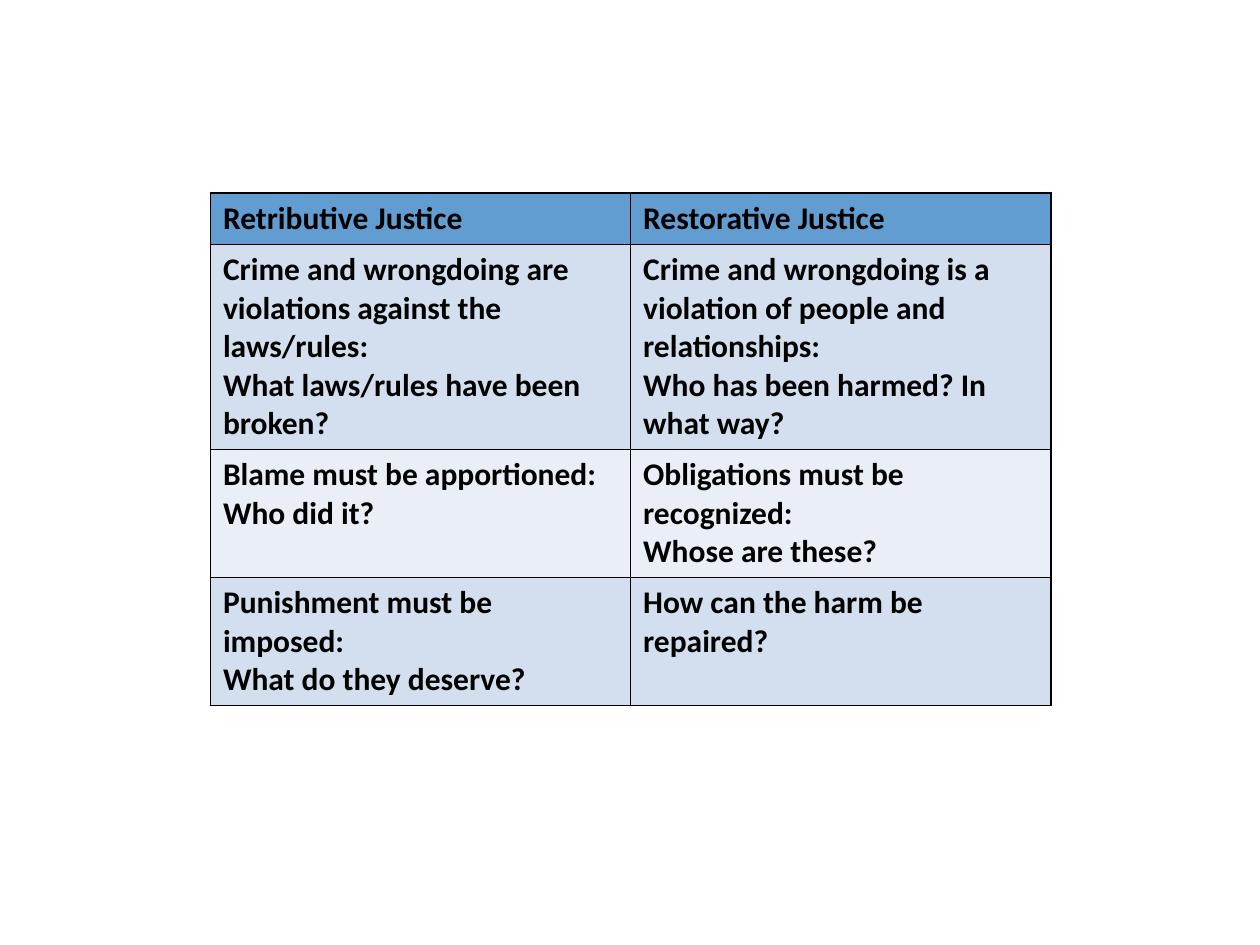
from lxml import etree
from pptx import Presentation
from pptx import util as u
from pptx.dml.color import RGBColor
from pptx.oxml.ns import qn

ROWS = [
    (["Retributive Justice"], ["Restorative Justice"]),
    (["Crime and wrongdoing are violations against the laws/rules:",
      "What laws/rules have been broken?"],
     ["Crime and wrongdoing is a violation of people and relationships:",
      "Who has been harmed? In what way?"]),
    (["Blame must be apportioned:", "Who did it?"],
     ["Obligations must be recognized:", "Whose are these?"]),
    (["Punishment must be imposed:", "What do they deserve?"],
     ["How can the harm be repaired?"]),
]
HEIGHTS = [0.41, 1.6, 1, 1]
COLORS = {"header": "629DD1", "odd": "D3DFEE", "even": "EAEFF7", "ink": "000000"}
FONT = {"name": "Calibri", "size": u.Pt(18), "bold": True}


def add_borders(cell):
    properties = cell._tc.get_or_add_tcPr()
    for position, side in enumerate(("lnL", "lnR", "lnT", "lnB")):
        line = etree.Element(qn(f"a:{side}"), w=str(u.Pt(1)))
        fill = etree.SubElement(line, qn("a:solidFill"))
        etree.SubElement(fill, qn("a:srgbClr"), val=COLORS["ink"])
        properties.insert(position, line)


def fill_cell(cell, lines, color):
    cell.fill.solid()
    cell.fill.fore_color.rgb = RGBColor.from_string(color)
    cell.text_frame.text = "\n".join(lines)
    for para in cell.text_frame.paragraphs:
        for span in para.runs:
            for name, value in FONT.items():
                setattr(span.font, name, value)
            span.font.color.rgb = RGBColor.from_string(COLORS["ink"])
    add_borders(cell)


def main():
    deck = Presentation()
    deck.slide_width, deck.slide_height = u.Inches(10), u.Inches(7.5)
    page = deck.slides.add_slide(deck.slide_layouts[6])
    frame = page.shapes.add_table(
        len(ROWS), len(ROWS[0]), u.Inches(1.67), u.Inches(1.53),
        u.Inches(6.67), u.Inches(sum(HEIGHTS)))
    table = frame.table
    for index, (cells, height) in enumerate(zip(ROWS, HEIGHTS)):
        table.rows[index].height = u.Inches(height)
        band = "header" if index == 0 else "odd" if index % 2 else "even"
        for column, lines in enumerate(cells):
            fill_cell(table.cell(index, column), lines, COLORS[band])
    deck.save("out.pptx")


if __name__ == "__main__":
    main()
